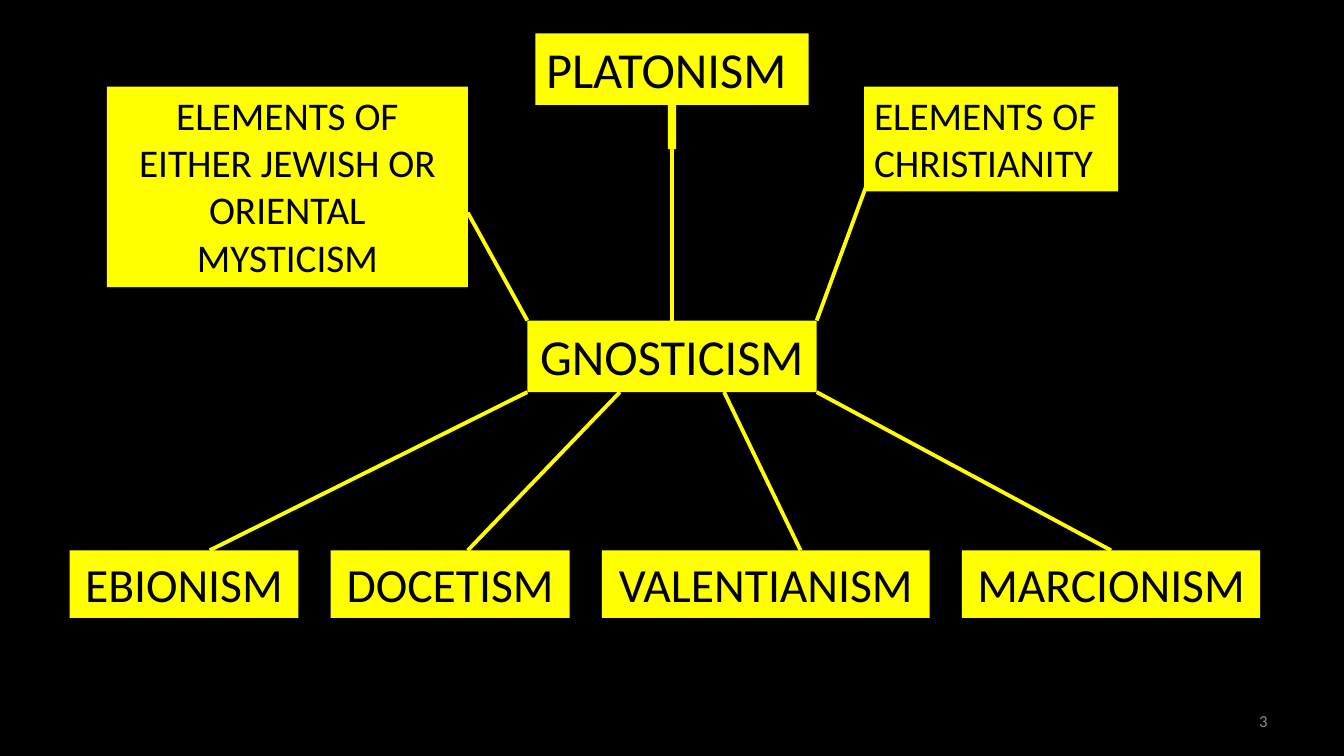
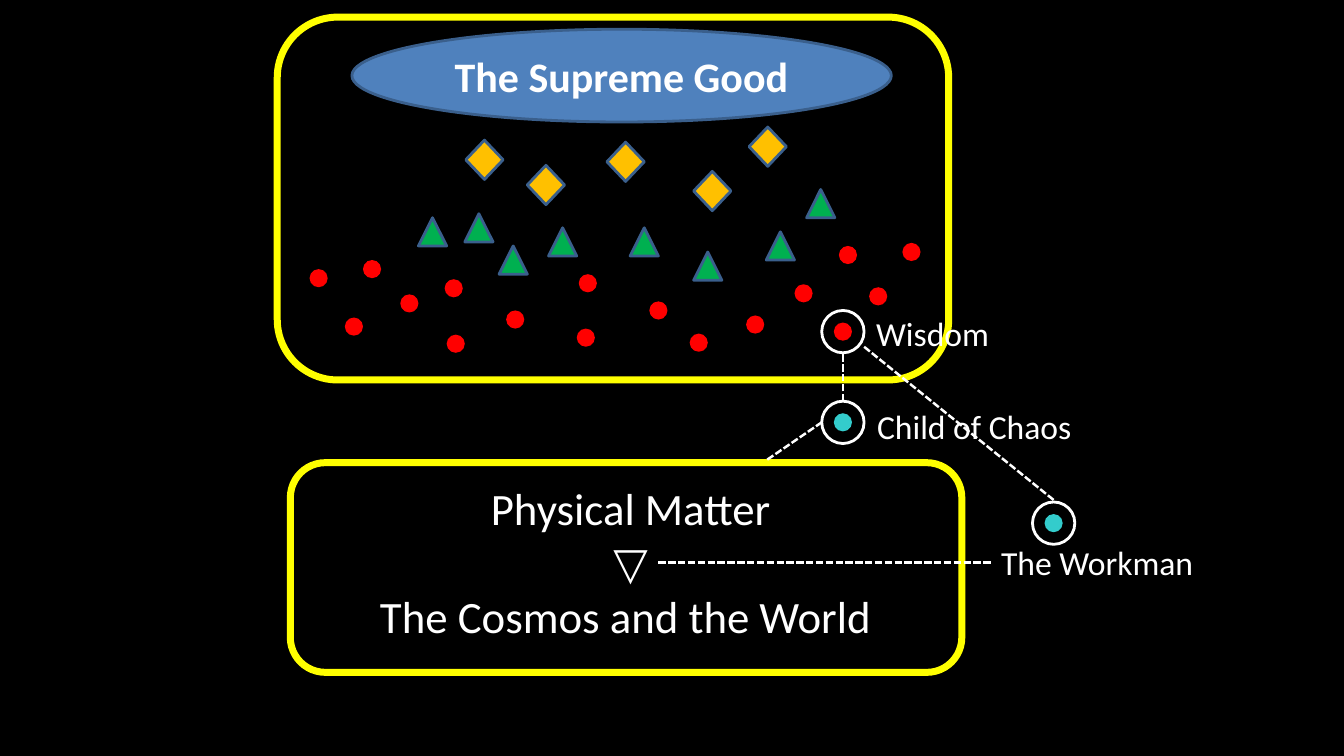
from lxml import etree
from pptx import Presentation
from pptx.dml.color import RGBColor
from pptx.enum import dml, shapes, text
from pptx.oxml import ns
from pptx.util import Inches, Pt

FONT = "Calibri"
BLACK, WHITE, YELLOW = "000000", "FFFFFF", "FFFF00"
BLUE, EDGE, GOLD, GREEN = "4F81BD", "3A5F8C", "FFC000", "00B050"
RED, TEAL, GREY = "FF0000", "33CCCC", "8C8C8C"

SHAPE = shapes.MSO_SHAPE
LEFT, CENTER, RIGHT = text.PP_ALIGN.LEFT, text.PP_ALIGN.CENTER, text.PP_ALIGN.RIGHT
TOP, MIDDLE = text.MSO_ANCHOR.TOP, text.MSO_ANCHOR.MIDDLE


def color(hex_code):
    return RGBColor.from_string(hex_code)


def add_black_slide(prs):
    slide = prs.slides.add_slide(prs.slide_layouts[6])
    slide.background.fill.solid()
    slide.background.fill.fore_color.rgb = color(BLACK)
    return slide


def write(shape, wording, size, ink=BLACK, align=CENTER, anchor=TOP, bold=False):
    """Fill a shape with text, one paragraph per line of wording."""
    frame = shape.text_frame
    frame.word_wrap = True
    frame.vertical_anchor = anchor
    frame.text = wording
    for paragraph in frame.paragraphs:
        paragraph.alignment = align
        font = paragraph.runs[0].font
        font.name, font.size, font.bold = FONT, Pt(size), bold
        font.color.rgb = color(ink)


def add_label(slide, box, wording, size, **style):
    label = slide.shapes.add_textbox(*map(Inches, box))
    write(label, wording, size, **style)


def add_figure(parent, kind, box, fill=None, edge=None, weight=2):
    figure = parent.shapes.add_shape(kind, *map(Inches, box))
    figure.shadow.inherit = False
    if fill:
        figure.fill.solid()
        figure.fill.fore_color.rgb = color(fill)
    else:
        figure.fill.background()
    if edge:
        figure.line.color.rgb = color(edge)
        figure.line.width = Pt(weight)
    else:
        figure.line.fill.background()
    return figure


def add_link(slide, start, end, ink=YELLOW, weight=2.75, dashed=False):
    link = slide.shapes.add_connector(
        shapes.MSO_CONNECTOR.STRAIGHT, *map(Inches, (*start, *end)))
    link.line.color.rgb = color(ink)
    link.line.width = Pt(weight)
    if dashed:
        link.line.dash_style = dml.MSO_LINE.SQUARE_DOT
    etree.SubElement(link._element.spPr, ns.qn("a:effectLst"))
    return link


def add_dashes(slide, start, end):
    add_link(slide, start, end, WHITE, 1.75, dashed=True)


def add_plate(slide, box, wording, size, align=CENTER):
    plate = add_figure(slide, SHAPE.RECTANGLE, box, YELLOW)
    write(plate, wording, size, align=align)
    return plate


def draw_sources(slide, hub, hub_box):
    """Three influences above the hub, each linked down to its top edge."""
    left, top, width, _ = hub_box
    platonism = add_plate(slide, (left + 0.08, top - 2.85, 2.71, 0.71), "PLATONISM ", 36)
    add_plate(slide, (left - 4.17, top - 2.32, 3.58, 1.99),
              "ELEMENTS OF EITHER JEWISH OR ORIENTAL MYSTICISM", 28)
    add_plate(slide, (left + 3.34, top - 2.32, 2.52, 1.04),
              "ELEMENTS OF\nCHRISTIANITY", 28, align=LEFT)
    add_link(slide, (left - 0.59, top - 1.07), (left, top))
    add_link(slide, (left + 3.36, top - 1.33), (left + width, top))
    trunk = add_link(slide, (left + width / 2, top - 2.14), (left + width / 2, top))
    trunk.begin_connect(platonism, 2)
    trunk.end_connect(hub, 0)
    add_figure(slide, SHAPE.RECTANGLE,
               (left + width / 2 - 0.04, top - 2.14, 0.08, 0.44), YELLOW)


def draw_heresies(slide, hub_box, left, top, gap=0.32):
    """A row of branches, each linked to a point on the hub's bottom edge."""
    hub_left, hub_top, hub_width, hub_height = hub_box
    branches = [  # name, width, share of hub width, link end within the plate
        ("EBIONISM", 2.27, 0, 1.39),
        ("DOCETISM", 2.37, 0.32, 1.36),
        ("VALENTIANISM", 3.25, 0.68, 1.97),
        ("MARCIONISM", 2.96, 1, 1.48),
    ]
    for name, width, share, offset in branches:
        plate = add_plate(slide, (left, top, width, 0.67), name, 34)
        link = add_link(slide, (hub_left + share * hub_width, hub_top + hub_height),
                        (left + offset, top))
        if offset == width / 2:
            link.end_connect(plate, 0)
        left += width + gap


def build_origins(prs):
    slide = add_black_slide(prs)
    add_label(slide, (9.56, 6.95, 3.11, 0.4), "3", 12,
              ink=GREY, align=RIGHT, anchor=MIDDLE)
    hub_box = (5.23, 3.18, 2.87, 0.71)
    hub = add_plate(slide, hub_box, "GNOSTICISM", 36)
    draw_sources(slide, hub, hub_box)
    draw_heresies(slide, hub_box, 0.69, 5.46)


def add_frame(slide, box):
    add_figure(slide, SHAPE.ROUNDED_RECTANGLE, box, edge=YELLOW, weight=5)


def add_ringed_dot(slide, left, top, fill):
    being = slide.shapes.add_group_shape()
    add_figure(being, SHAPE.OVAL, (left + 0.12, top + 0.12, 0.18, 0.18), fill)
    add_figure(being, SHAPE.OVAL, (left, top, 0.42, 0.42), edge=WHITE)


def draw_heaven(slide, box):
    """The Supreme Good above three ranks of emanations, inside a frame."""
    left, top = box[:2]
    supreme = add_figure(slide, SHAPE.OVAL, (left + 0.74, top + 0.12, 5.35, 0.92), BLUE, EDGE)
    write(supreme, "The Supreme Good", 30, ink=WHITE, anchor=MIDDLE, bold=True)
    ranks = [
        (SHAPE.DIAMOND, 0.37, 0.39, GOLD, EDGE,
         [(1.87, 1.22), (4.13, 1.53), (3.27, 1.24), (4.68, 1.09), (2.48, 1.47)]),
        (SHAPE.ISOSCELES_TRIANGLE, 0.28, 0.28, GREEN, EDGE,
         [(1.4, 1.99), (1.86, 1.95), (4.13, 2.33), (5.25, 1.71),
          (2.2, 2.27), (4.85, 2.13), (2.69, 2.09), (3.5, 2.09)]),
        (SHAPE.OVAL, 0.18, 0.18, RED, None,
         [(0.32, 2.5), (1.66, 2.6), (2.99, 2.55), (0.67, 2.98),
          (4.09, 3.14), (5.87, 2.68), (2.97, 3.09), (1.68, 3.15),
          (6.2, 2.24), (4.65, 2.96), (1.22, 2.75), (2.27, 2.91),
          (0.85, 2.41), (5.57, 2.27), (3.69, 2.82), (5.13, 2.65)]),
    ]
    for kind, width, height, fill, edge, places in ranks:
        for x, y in places:
            add_figure(slide, kind, (left + x, top + y, width, height), fill, edge)
    add_frame(slide, box)


def draw_world(slide, box):
    left, top = box[:2]
    add_frame(slide, box)
    add_label(slide, (left + 0.38, top + 0.13, 5.99, 1.72),
              "Physical Matter\n▽\nThe Cosmos and the World ", 32, ink=WHITE)


def draw_fall(slide, left, top):
    """Wisdom at the given corner, her two offspring and their dashed links."""
    beings = [  # name, ring offset, label offset, label width, dot colour
        ("Wisdom", (0, 0), (0.44, -0.02), 1.51, RED),
        ("Child of Chaos", (0, 0.9), (0.45, 0.9), 2.21, TEAL),
        ("The Workman", (2.09, 1.9), (1.68, 2.25), 2.21, TEAL),
    ]
    for name, ring, label, width, fill in beings:
        add_ringed_dot(slide, left + ring[0], top + ring[1], fill)
        add_label(slide, (left + label[0], top + label[1], width, 0.5),
                  name, 24, ink=WHITE, align=LEFT)
    links = [
        ((0.21, 0.9), (0.21, 0.41)),
        ((-0.54, 1.48), (0, 1.11)),
        ((-1.62, 2.5), (1.68, 2.5)),
        ((2.3, 1.88), (0.42, 0.36)),
    ]
    for start, end in links:
        add_dashes(slide, (left + start[0], top + start[1]),
                   (left + end[0], top + end[1]))


def build_cosmology(prs):
    slide = add_black_slide(prs)
    draw_heaven(slide, (2.75, 0.17, 6.66, 3.6))
    draw_world(slide, (2.88, 4.59, 6.66, 2.08))
    draw_fall(slide, 8.15, 3.08)


def main():
    prs = Presentation()
    prs.slide_width, prs.slide_height = Inches(13.33), Inches(7.5)
    build_origins(prs)
    build_cosmology(prs)
    prs.save("out.pptx")


if __name__ == "__main__":
    main()
